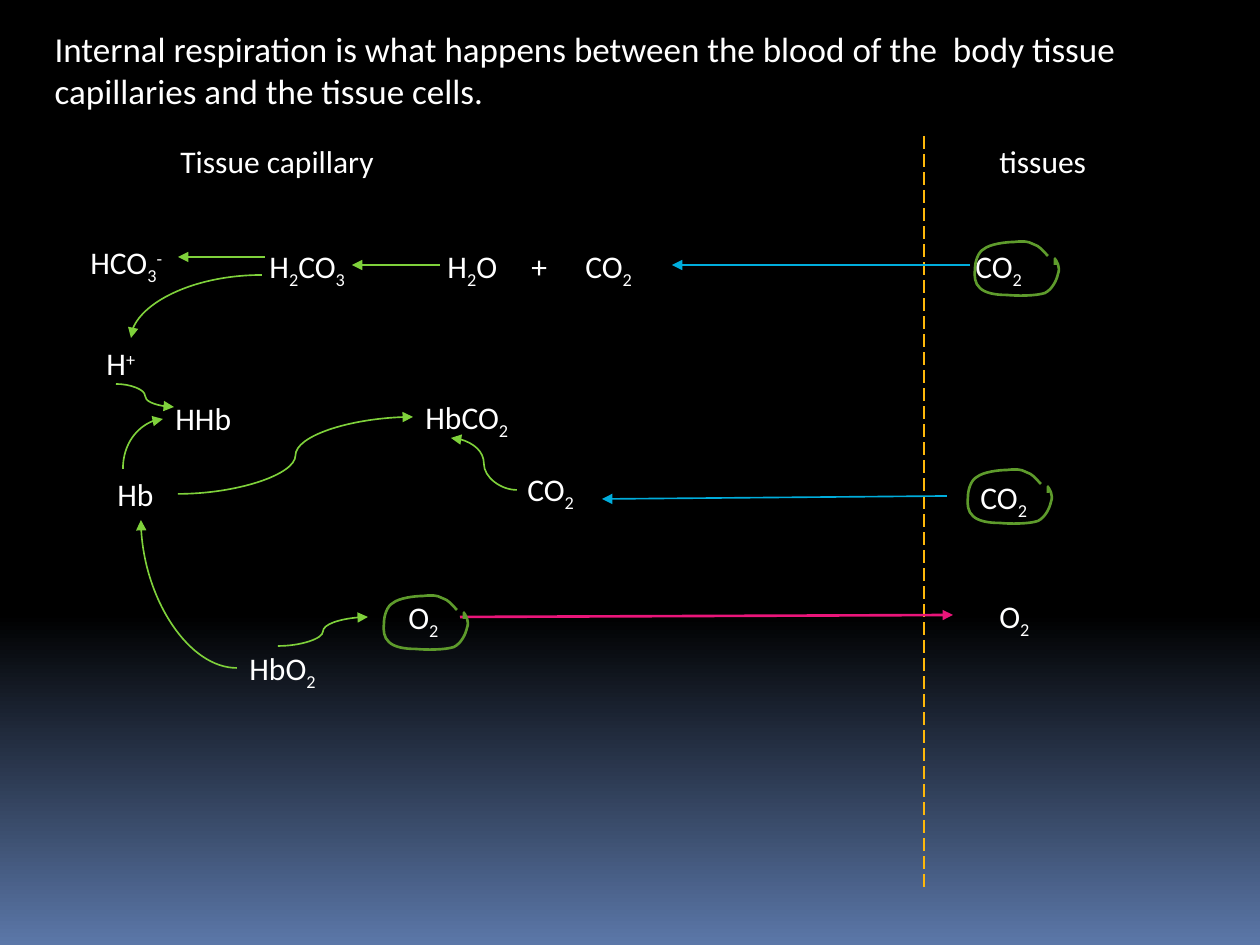
import itertools
from dataclasses import dataclass
from typing import Optional

import lxml.etree
import pptx
import pptx.dml.color
import pptx.enum.dml
import pptx.enum.shapes
import pptx.enum.text
import pptx.oxml.ns
import pptx.util

EMU_PER_PX = 914400 / 126
FONT = "Calibri"
LABEL_HEIGHT = 50
COLORS = {
    "black": "000000",
    "sky": "5B77A8",
    "text": "FFFFFF",
    "wall": "FEB80A",
    "reaction": "7FD13B",
    "carbon_dioxide": "00ADDC",
    "oxygen": "EA157A",
    "ring": "5E9B2C",
}
# Index digits and charges, in thousandths of a percent
BASELINES = {"2": -25000, "3": -25000, "+": 30000, "-": 30000}
qn = pptx.oxml.ns.qn


@dataclass(frozen=True)
class Label:
    text: str
    left: int
    top: int
    width: int


@dataclass(frozen=True)
class Arrow:
    start: tuple[int, int]
    end: tuple[int, int]
    color: str = "reaction"
    preset: str = "line"
    width: float = 0.94
    tip: Optional[str] = "tailEnd"


CAPILLARY_OXYGEN = Label("O2", 396, 592, 64)
LABELS = [
    Label("tissues", 987, 136, 199),
    Label("Tissue capillary", 168, 136, 557),
    Label("Hb", 105, 469, 73),
    Label("HbO2", 237, 643, 116),
    Label("HbCO2", 413, 392, 126),
    Label("HCO3-", 78, 237, 126),
    Label("H+", 94, 338, 73),
    Label("H2O", 435, 241, 105),
    Label("CO2", 573, 241, 86),
    Label("H2CO3", 257, 241, 129),
    Label("+", 519, 241, 32),
    Label("CO2", 515, 464, 86),
    Label("HHb", 163, 393, 101),
    Label("O2", 987, 591, 64),
    Label("CO2", 968, 472, 81),
    Label("CO2", 963, 241, 86),
]
WALL = Arrow((924, 136), (924, 892), "wall", tip=None)
OXYGEN_RELEASE = Arrow((461, 617), (953, 615), "oxygen", width=1.5)
ARROWS = [
    Arrow((440, 265), (352, 265)),
    Arrow((265, 257), (178, 257)),
    Arrow((970, 265), (672, 265), "carbon_dioxide"),
    Arrow((947, 496), (602, 499), "carbon_dioxide"),
    # Quarter bends leave their start horizontally
    Arrow((262, 275), (131, 338), preset="curvedConnector2"),
    Arrow((237, 668), (141, 520), preset="curvedConnector2"),
    Arrow((163, 419), (123, 469), preset="curvedConnector2", tip="headEnd"),
    # S bends
    Arrow((116, 384), (174, 407), preset="curvedConnector3"),
    Arrow((178, 494), (413, 417), preset="curvedConnector3"),
    Arrow((517, 490), (451, 438), preset="curvedConnector3"),
    Arrow((278, 646), (368, 617), preset="curvedConnector3"),
]
RING_ORIGINS = [(967, 469), (383, 595), (974, 241)]
# Start point, then three Bezier points per curve
RING_POINTS = [
    (74, 15),
    (69, 10), (66, 5), (59, 3),
    (54, 0), (48, 0), (40, 1),
    (32, 1), (16, 3), (10, 8),
    (4, 11), (1, 21), (1, 28),
    (0, 35), (1, 43), (6, 47),
    (11, 52), (21, 54), (33, 54),
    (43, 55), (62, 55), (71, 52),
    (79, 48), (83, 38), (84, 33),
    (87, 26), (82, 19), (81, 18),
    (81, 16), (81, 20), (81, 24),
]


def px(length: int) -> pptx.util.Emu:
    return pptx.util.Emu(round(length * EMU_PER_PX))


def rgb(name: str) -> pptx.dml.color.RGBColor:
    return pptx.dml.color.RGBColor.from_string(COLORS[name])


def format_span(span, size: int) -> None:
    span.font.name = FONT
    span.font.size = pptx.util.Pt(size)
    span.font.color.rgb = rgb("text")


def paint_background(page) -> None:
    fill = page.background.fill
    fill.gradient()
    fill.gradient_angle = 270
    for stop, position, color in zip(fill.gradient_stops, (0.65, 1), ("black", "sky")):
        stop.position = position
        stop.color.rgb = rgb(color)


def write_title(page, text: str) -> None:
    title = page.shapes.title
    title.left, title.top, title.width, title.height = map(px, (42, 21, 1166, 97))
    title.text_frame.text = text
    title.text_frame.vertical_anchor = pptx.enum.text.MSO_ANCHOR.TOP
    para = title.text_frame.paragraphs[0]
    para.alignment = pptx.enum.text.PP_ALIGN.LEFT
    format_span(para.runs[0], 20)


def draw_label(page, label: Label):
    box = page.shapes.add_textbox(
        px(label.left), px(label.top), px(label.width), px(LABEL_HEIGHT))
    box.text_frame.word_wrap = True
    box.text_frame.auto_size = pptx.enum.text.MSO_AUTO_SIZE.SHAPE_TO_FIT_TEXT
    para = box.text_frame.paragraphs[0]
    baselines = BASELINES if len(label.text) > 1 else {}
    for baseline, letters in itertools.groupby(label.text, lambda c: baselines.get(c, 0)):
        span = para.add_run()
        span.text = "".join(letters)
        format_span(span, 18)
        if baseline:
            span.font._element.set("baseline", str(baseline))
    return box


def draw_arrow(page, arrow: Arrow):
    kinds = pptx.enum.shapes.MSO_CONNECTOR
    kind = kinds.STRAIGHT if arrow.preset == "line" else kinds.CURVE
    connector = page.shapes.add_connector(kind, *map(px, arrow.start + arrow.end))
    properties = connector._element.spPr
    properties.find(qn("a:prstGeom")).set("prst", arrow.preset)
    connector.line.color.rgb = rgb(arrow.color)
    connector.line.width = pptx.util.Pt(arrow.width)
    if arrow.tip:
        outline = properties.find(qn("a:ln"))
        lxml.etree.SubElement(outline, qn(f"a:{arrow.tip}"), type="triangle")
    lxml.etree.SubElement(properties, qn("a:effectLst"))
    return connector


def draw_ring(page, left: int, top: int) -> None:
    points = [(px(left + x), px(top + y)) for x, y in RING_POINTS]
    builder = page.shapes.build_freeform(*points[0])
    builder.add_line_segments(points[1:], close=False)
    ring = builder.convert_to_shape()
    # Turn each group of three segments into one Bezier curve
    segments = list(ring._element.iter(qn("a:lnTo")))
    for first in range(0, len(segments), 3):
        group = segments[first:first + 3]
        curve = lxml.etree.SubElement(group[0].getparent(), qn("a:cubicBezTo"))
        for segment in group:
            curve.append(segment[0])
            segment.getparent().remove(segment)
    ring.fill.background()
    ring.line.color.rgb = rgb("ring")
    ring.line.width = pptx.util.Pt(1.5)
    ring.shadow.inherit = False


def main() -> None:
    deck = pptx.Presentation()
    deck.slide_width, deck.slide_height = px(1260), px(945)
    page = deck.slides.add_slide(deck.slide_layouts[5])
    paint_background(page)
    write_title(page, "Internal respiration is what happens between the blood of the  "
                      "body tissue capillaries and the tissue cells.")

    # Capillary wall
    wall = draw_arrow(page, WALL)
    wall.line.dash_style = pptx.enum.dml.MSO_LINE.LONG_DASH

    # Substances and reactions
    for label in LABELS:
        draw_label(page, label)
    for arrow in ARROWS:
        draw_arrow(page, arrow)

    # Oxygen leaving the capillary
    oxygen_box = draw_label(page, CAPILLARY_OXYGEN)
    draw_arrow(page, OXYGEN_RELEASE).begin_connect(oxygen_box, 3)

    # Rings around the exchanged gases
    for left, top in RING_ORIGINS:
        draw_ring(page, left, top)

    deck.save("out.pptx")


if __name__ == "__main__":
    main()
